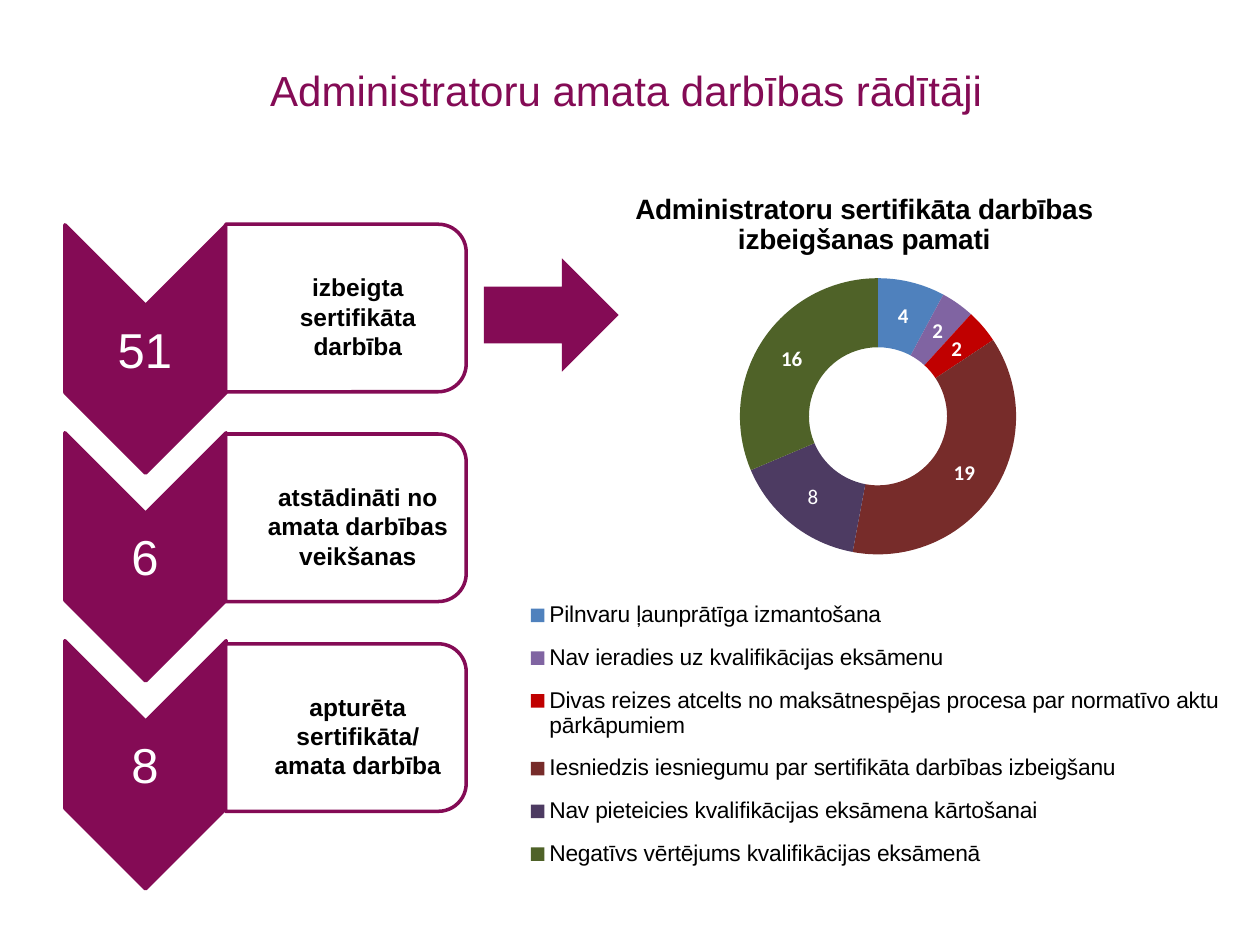
from dataclasses import dataclass

from lxml.etree import SubElement
from pptx import Presentation
from pptx.chart.data import CategoryChartData as ChartData
from pptx.dml.color import RGBColor as Color
from pptx.enum.chart import XL_CHART_TYPE as ChartType, XL_LEGEND_POSITION as LegendSpot
from pptx.enum.shapes import MSO_SHAPE as Preset
from pptx.enum.text import MSO_ANCHOR as Anchor, PP_ALIGN as Align
from pptx.oxml import parse_xml
from pptx.oxml.ns import nsdecls, qn
from pptx.util import Inches, Pt


@dataclass(frozen=True)
class Theme:
    """Colours, fonts and type sizes of the slide."""
    accent: str = "840B55"
    ink: str = "000000"
    paper: str = "FFFFFF"
    slices: tuple = ("4F81BD", "8064A2", "C00000", "772C2A", "4D3B62", "4F6228")
    face: str = "Arial"
    value_face: str = "Calibri"
    title: int = 24
    number: int = 28
    label: int = 14
    chart_title: int = 16
    legend: int = 13
    value: int = 12
    outline: int = 2


class Board:
    """Draws elements on one slide, on a grid of 100 columns by 75 rows."""

    def __init__(self, deck, theme):
        """Add a title-only slide and keep the style."""
        self.theme = theme
        self.slide = deck.slides.add_slide(deck.slide_layouts[5])
        self.column = deck.slide_width / 100
        self.row = deck.slide_height / 75

    def place(self, at):
        """Turn grid cells into lengths."""
        left, top, width, height = at
        return [round(n) for n in (left * self.column, top * self.row,
                                   width * self.column, height * self.row)]

    def style(self, font, size, color, bold=False, face=None):
        """Apply one set of format values to a font."""
        values = {"size": Pt(size), "bold": bold, "name": face or self.theme.face}
        for name, value in values.items():
            setattr(font, name, value)
        font.color.rgb = Color.from_string(color)

    def set_words(self, box, words, size, color, bold=False, insets=(0, 0, 0, 0)):
        """Fill a box with one centred paragraph."""
        frame = box.text_frame
        sides = ("margin_left", "margin_top", "margin_right", "margin_bottom")
        values = {"word_wrap": True, "vertical_anchor": Anchor.MIDDLE}
        values.update(zip(sides, map(Inches, insets)))
        for name, value in values.items():
            setattr(frame, name, value)
        para = frame.paragraphs[0]
        para.alignment = Align.CENTER
        span = para.add_run()
        span.text = words
        self.style(span.font, size, color, bold)

    def title(self, at, words):
        """Move and fill the title placeholder."""
        box = self.slide.shapes.title
        box.left, box.top, box.width, box.height = self.place(at)
        self.set_words(box, words, self.theme.title, self.theme.accent,
                       insets=(0.1, 0.05, 1.59, 0.05))

    def text(self, at, words, size, color, bold=False, insets=(0.02,) * 4):
        """Add a text box."""
        box = self.slide.shapes.add_textbox(*self.place(at))
        self.set_words(box, words, size, color, bold, insets)

    def shape(self, preset, at, fill, outlined=True, rotation=0, opacity=100):
        """Add a preset shape."""
        shape = self.slide.shapes.add_shape(preset, *self.place(at))
        shape.shadow.inherit = False
        shape.rotation = rotation
        shape.fill.solid()
        shape.fill.fore_color.rgb = Color.from_string(fill)
        if opacity < 100:
            paint = shape.fill._xPr.find(".//" + qn("a:srgbClr"))
            SubElement(paint, qn("a:alpha"), val=str(opacity * 1000))
        if outlined:
            shape.line.color.rgb = Color.from_string(self.theme.accent)
            shape.line.width = Pt(self.theme.outline)
        else:
            shape.line.fill.background()

    def arrange(self, element, **shares):
        """Give a chart part a manual place, in shares of the chart."""
        for old in element.findall(qn("c:layout")):
            element.remove(old)
        inner = element.tag == qn("c:plotArea")
        target = '<c:layoutTarget val="inner"/>' if inner else ""
        modes = "".join(f'<c:{key}Mode val="edge"/>' for key in "xy")
        sizes = "".join(f'<c:{key} val="{share}"/>' for key, share in shares.items())
        layout = parse_xml(f'<c:layout {nsdecls("c")}><c:manualLayout>{target}{modes}{sizes}'
                           '</c:manualLayout></c:layout>')
        overlay = element.find(qn("c:overlay"))
        (element[0] if overlay is None else overlay).addprevious(layout)

    def doughnut(self, at, heading, items):
        """Add a doughnut chart with its title, legend and values."""
        theme = self.theme
        data = ChartData(number_format="0")
        data.categories = list(items)
        data.add_series(heading, list(items.values()))
        chart = self.slide.shapes.add_chart(ChartType.DOUGHNUT, *self.place(at), data).chart
        self.style(chart.font, theme.value, theme.ink, face=theme.value_face)

        chart.has_title = True
        span = chart.chart_title.text_frame.paragraphs[0].add_run()
        span.text = heading
        self.style(span.font, theme.chart_title, theme.ink, True)
        self.arrange(chart.chart_title._element, x=0.16, y=0.08)

        chart.has_legend = True
        chart.legend.position = LegendSpot.BOTTOM
        chart.legend.include_in_layout = True
        self.style(chart.legend.font, theme.legend, theme.ink)
        self.arrange(chart.legend._element, x=0.01, y=0.6, w=0.98, h=0.39)

        plot = chart.plots[0]
        plot.vary_by_categories = True
        self.arrange(chart._chartSpace.chart.plotArea, x=0.31, y=0.2, w=0.39, h=0.36)
        series = plot.series[0]
        labels = series.data_labels
        values = {"show_value": True, "show_percentage": False,
                  "number_format": "0", "number_format_is_linked": False}
        for name, value in values.items():
            setattr(labels, name, value)
        self.style(labels.font, theme.value, theme.paper, True, theme.value_face)
        for index, color in enumerate(theme.slices):
            fill = series.points[index].format.fill
            fill.solid()
            fill.fore_color.rgb = Color.from_string(color)
        plain = series.points[4].data_label
        self.style(plain.font, theme.value, theme.paper, face=theme.value_face)


def main():
    """Build and save the slide."""
    deck = Presentation()
    deck.slide_width, deck.slide_height = Inches(10), Inches(7.5)
    theme = Theme()
    board = Board(deck, theme)
    board.title((19.3, 4.2, 75.7, 5.8), "Administratoru amata darbības rādītāji")

    steps = (("51", "izbeigta sertifikāta darbība"),
             ("6", "atstādināti no amata darbības veikšanas"),
             ("8", "apturēta sertifikāta/ amata darbība"))
    for index, (number, label) in enumerate(steps):
        drop, label_drop = index * 16.5, index * 16.65
        board.shape(Preset.CHEVRON, (1.7, 21.3 + drop, 19.7, 12.8), theme.accent, rotation=90)
        board.text((5.1, 24.2 + drop, 12.8, 6.9), number, theme.number, theme.paper)
        board.shape(Preset.ROUND_2_SAME_RECTANGLE, (20.8, 14.9 + label_drop, 13.3, 19.1),
                    theme.paper, rotation=90, opacity=90)
        board.text((17.9, 18.5 + label_drop, 18.5, 12), label, theme.label, theme.ink,
                   True, (0.28, 0.15, 0.03, 0.03))

    board.shape(Preset.RIGHT_ARROW, (38.4, 20.5, 10.7, 9), theme.accent, outlined=False)
    board.doughnut((40.9, 9.9, 57, 60.9),
                   "Administratoru sertifikāta darbības izbeigšanas pamati", {
                       "Pilnvaru ļaunprātīga izmantošana": 4,
                       "Nav ieradies uz kvalifikācijas eksāmenu": 2,
                       "Divas reizes atcelts no maksātnespējas procesa "
                       "par normatīvo aktu pārkāpumiem": 2,
                       "Iesniedzis iesniegumu par sertifikāta darbības izbeigšanu": 19,
                       "Nav pieteicies kvalifikācijas eksāmena kārtošanai": 8,
                       "Negatīvs vērtējums kvalifikācijas eksāmenā": 16,
                   })
    deck.save("out.pptx")


if __name__ == "__main__":
    main()
